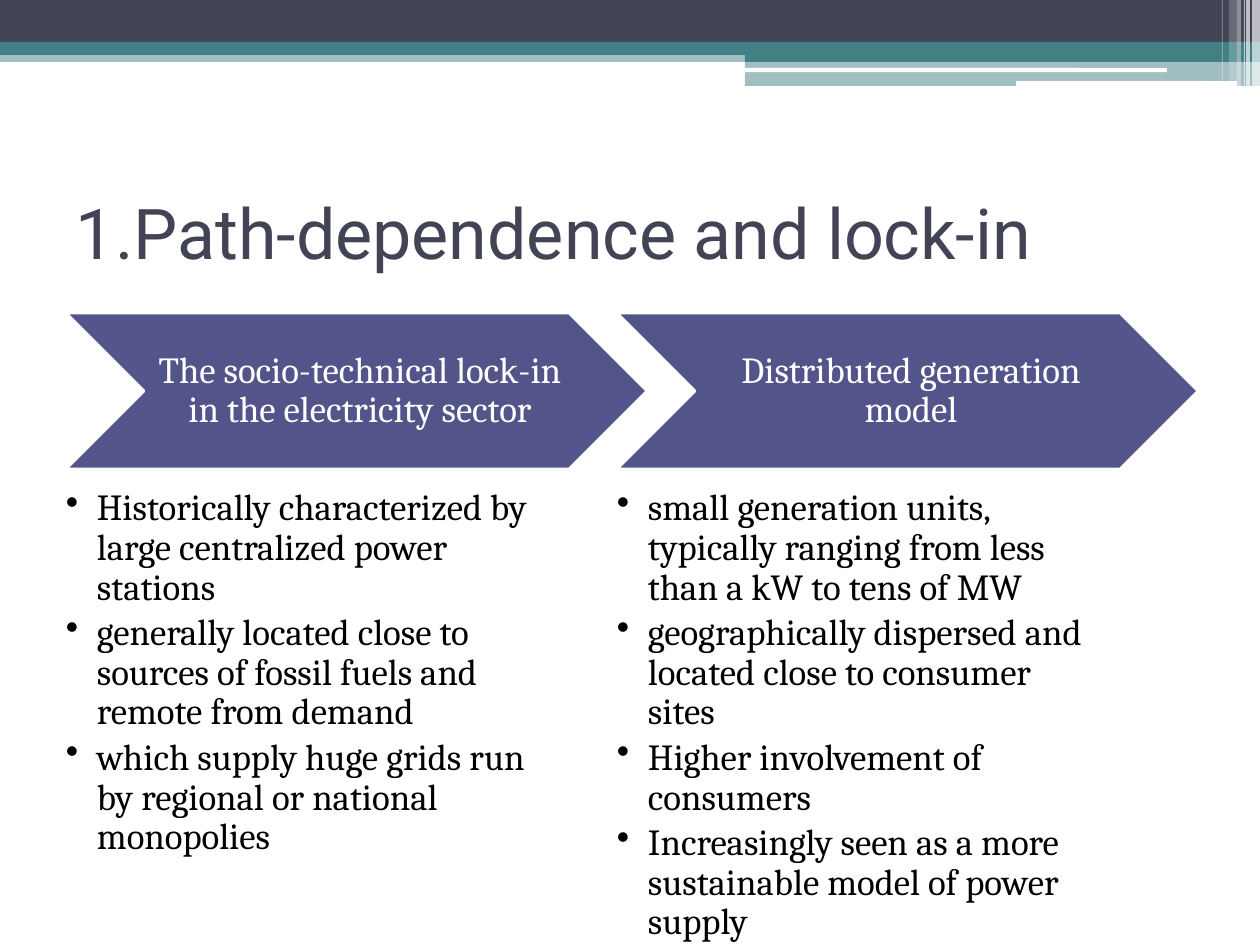
"""Build the slide on path-dependence and lock-in in the electricity sector."""
from lxml.etree import SubElement
from pptx import Presentation
from pptx.dml.color import RGBColor as RGB
from pptx.enum.shapes import MSO_SHAPE as SHAPE
from pptx.enum.text import MSO_ANCHOR as ANCHOR, MSO_AUTO_SIZE as AUTO, PP_ALIGN as ALIGN
from pptx.oxml.ns import qn
from pptx.util import Pt

PX = 914400 / 126
COLORS = {"navy": "424456", "teal": "438086", "violet": "53548A",
          "white": "FFFFFF", "black": "000000"}


def add_block(kind, box, color, alpha=100):
    sp = s.shapes.add_shape(kind, *[round(v * PX) for v in box])
    sp.shadow.inherit = False
    sp.fill.solid()
    sp.fill.fore_color.rgb = RGB.from_string(COLORS[color])
    sp.line.fill.background()
    if alpha < 100:
        clr = sp._element.spPr.find(qn("a:solidFill"))[0]
        SubElement(clr, qn("a:alpha"), val=str(alpha * 1000))
    return sp


def write(sp, box, lines, font, size, color, margins, anchor, para):
    sp.left, sp.top, sp.width, sp.height = [round(v * PX) for v in box]
    tf = sp.text_frame
    left, other = [round(v * PX) for v in margins]
    frame = {"word_wrap": True, "auto_size": AUTO.NONE, "vertical_anchor": anchor,
             "margin_left": left, "margin_top": other,
             "margin_right": other, "margin_bottom": other}
    for name, value in frame.items():
        setattr(tf, name, value)
    for i, line in enumerate(lines):
        p = tf.add_paragraph() if i else tf.paragraphs[0]
        for name, value in para.items():
            setattr(p, name, value)
        r = p.add_run()
        r.text = line
        for name, value in {"name": font, "size": Pt(size)}.items():
            setattr(r.font, name, value)
        r.font.color.rgb = RGB.from_string(COLORS[color])
    return tf


prs = Presentation()
prs.slide_width, prs.slide_height = round(1260 * PX), round(945 * PX)
s = prs.slides.add_slide(prs.slide_layouts[5])

bands = [
    (SHAPE.RECTANGLE, (0, 50, 1260, 12), "teal", 50),
    (SHAPE.RECTANGLE, (0, 0, 1260, 42), "navy", 100),
    (SHAPE.RECTANGLE, (0, 42, 1260, 13), "teal", 100),
    (SHAPE.RECTANGLE, (745, 49, 515, 13), "teal", 100),
    (SHAPE.RECTANGLE, (745, 61, 515, 25), "teal", 50),
    (SHAPE.ROUNDED_RECTANGLE, (745, 68, 422, 4), "white", 100),
    (SHAPE.ROUNDED_RECTANGLE, (1016, 81, 221, 5), "white", 100),
]
for band in bands:
    add_block(*band)

stripes = [(1252, 8, 86, 65), (1246, 4, 86, 65), (1244, 1, 86, 60),
           (1237, 4, 86, 40), (1229, 8, 81, 20), (1222, 1, 81, 30)]
for x, width, height, alpha in stripes:
    add_block(SHAPE.RECTANGLE, (x, 0, width, height), "white", alpha)

write(s.shapes.title, (63, 158, 1134, 147), ["1.Path-dependence and lock-in"],
      "Roboto", 40, "navy", (13, 6), ANCHOR.MIDDLE, {"alignment": ALIGN.LEFT})

columns = [
    ("The socio-technical lock-in in the electricity sector", [
        "Historically characterized by large centralized power stations",
        "generally located close to sources of fossil fuels and remote from demand",
        "which supply huge grids run by regional or national monopolies"]),
    ("Distributed generation model", [
        "small generation units, typically ranging from less than a kW to tens of MW",
        "geographically dispersed and located close to consumer sites",
        "Higher involvement of consumers",
        "Increasingly seen as a more sustainable model of power supply"]),
]
for i, (heading, points) in enumerate(columns):
    x = 66 + 551 * i
    sp = add_block(SHAPE.CHEVRON, (x, 313, 581, 156), "violet")
    sp.line.color.rgb = RGB.from_string(COLORS["white"])
    sp.line.width = Pt(1.5)
    write(s.shapes.add_textbox(0, 0, 0, 0), (x + 78, 313, 425, 156), [heading],
          "Cambria", 21, "white", (11, 4), ANCHOR.MIDDLE,
          {"alignment": ALIGN.CENTER, "line_spacing": 0.9})
    tf = write(s.shapes.add_textbox(0, 0, 0, 0), (x, 489, 465, 440), points,
               "Cambria", 21, "black", (0, 0), ANCHOR.TOP,
               {"alignment": ALIGN.LEFT, "line_spacing": 0.9, "space_after": Pt(3.3)})
    for p in tf.paragraphs:
        pPr = p._p.get_or_add_pPr()
        pPr.set("marL", str(round(31 * PX)))
        pPr.set("indent", str(round(-31 * PX)))
        SubElement(pPr, qn("a:buChar"), char="•")

prs.save("out.pptx")
